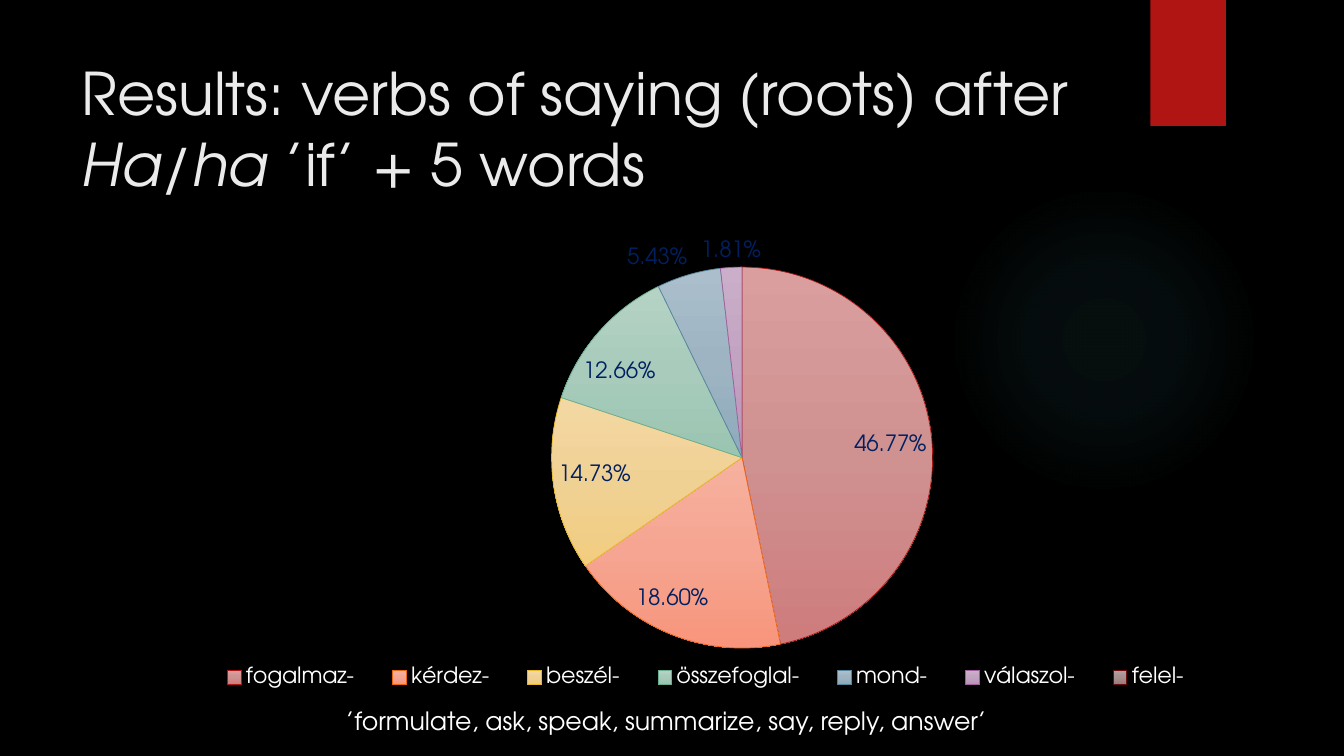
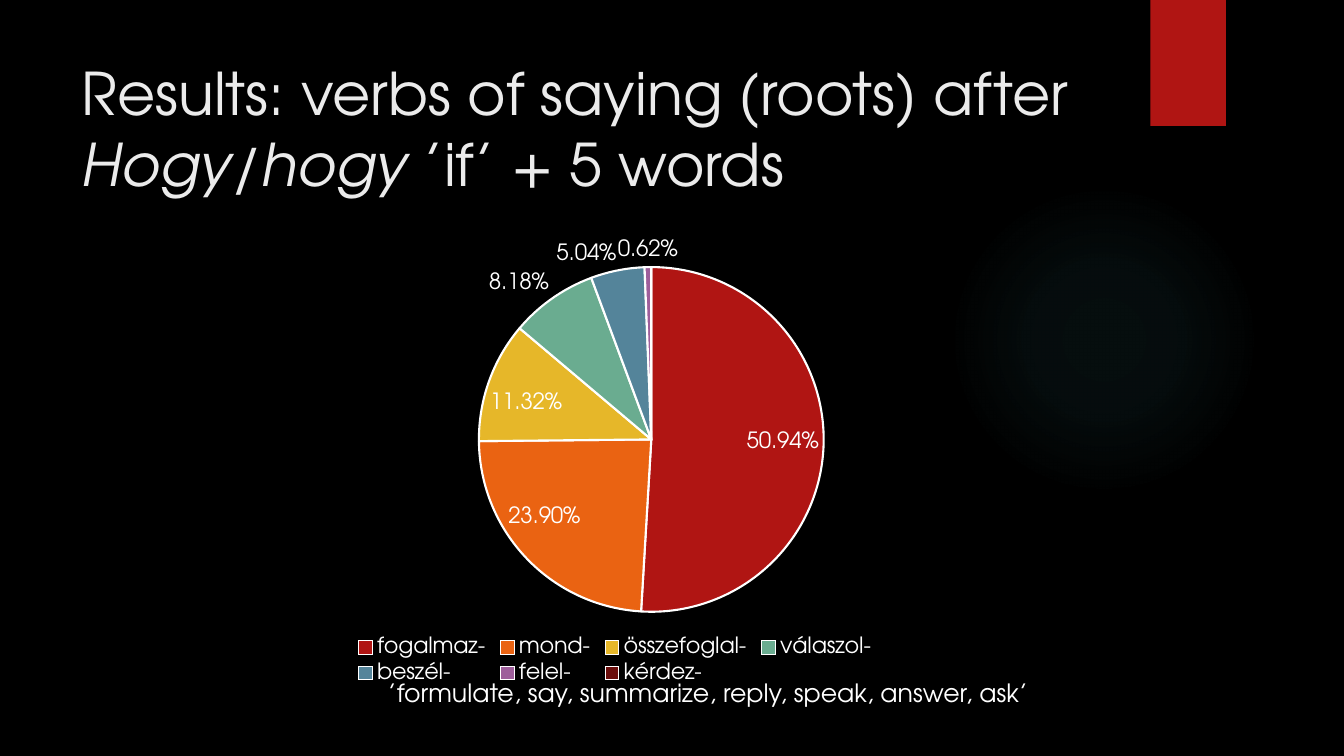
from dataclasses import dataclass

from pptx import Presentation
from pptx.chart.data import CategoryChartData
from pptx.dml.color import RGBColor
from pptx.enum.chart import XL_CHART_TYPE, XL_LABEL_POSITION, XL_LEGEND_POSITION
from pptx.enum.shapes import MSO_SHAPE
from pptx.enum.text import MSO_ANCHOR, MSO_AUTO_SIZE, PP_ALIGN
from pptx.oxml import parse_xml
from pptx.oxml.ns import nsdecls, qn
from pptx.util import Inches, Pt


@dataclass(frozen=True)
class Theme:
    font: str = "TeX Gyre Adventor"
    background: str = "000000"
    title: str = "EBEBEB"
    text: str = "FFFFFF"
    navy: str = "002060"
    glow: str = "50B9C1"
    accents: tuple = ("B01513", "EA6312", "E6B729", "6AAC90", "54849A", "9E5E9B", "6A0D0B")
    tints: tuple = (
        ("DB9E9E", "D09191", "CE7C7C"),
        ("F7B19F", "F5A591", "F8957C"),
        ("F3D8A3", "F0D194", "F2CD80"),
        ("B5D3C5", "A8CBBB", "9AC5B1"),
        ("AABFCB", "9EB4C2", "8DAABB"),
        ("CBAFCA", "C2A3C1", "BB93B9"),
        ("B39E9E", "A89090", "9C7C7C"),
    )
    title_size: int = 42
    caption_size: int = 18
    chart_size: int = 16


THEME = Theme()
TITLE_BOX = (0.71, 0.5, 10.29, 1.53)
GLOW_BOX = (9.41, 1.83, 3.08, 3.08)
BAND_BOX = (11.41, 0, 0.75, 1.25)
DOWNWARD = '<a:lin ang="5400000" scaled="0"/>'
RADIAL = '<a:path path="circle"><a:fillToRect l="50000" t="50000" r="50000" b="50000"/></a:path>'

# Boxes are left, top, width, height in inches on the slide.
SLIDES = [
    {
        "conjunction": "Ha/ha ",
        "shares": {"fogalmaz-": 0.4677, "kérdez-": 0.186, "beszél-": 0.1473,
                   "összefoglal-": 0.1266, "mond-": 0.0543, "válaszol-": 0.0181, "felel-": 0},
        "tinted": True,
        "label_color": THEME.navy,
        "chart_box": (1.21, 2.24, 11.54, 4.89),
        "pie_box": (5.47, 2.65, 3.78, 3.78),
        "legend_box": (1.95, 6.53, 10.1, 0.38),
        "translation": "’formulate, ask, speak, summarize, say, reply, answer’",
        "translation_box": (3.33, 6.95, 8.76, 0.4),
    },
    {
        "conjunction": "Hogy/hogy ",
        "shares": {"fogalmaz-": 0.5094, "mond-": 0.239, "összefoglal-": 0.1132,
                   "válaszol-": 0.0818, "beszél-": 0.0504, "felel-": 0.0062, "kérdez-": 0},
        "tinted": False,
        "label_color": THEME.text,
        "chart_box": (1.21, 2.24, 9.78, 4.59),
        "pie_box": (4.75, 2.65, 3.42, 3.42),
        "legend_box": (3.48, 6.27, 5.24, 0.56),
        "translation": "’formulate, say, summarize, reply, speak, answer, ask’",
        "translation_box": (3.75, 6.67, 9.2, 0.4),
    },
]


def rgb(color):
    return RGBColor.from_string(color)


def inches(box):
    return [Inches(length) for length in box]


def style_font(font, size, color):
    font.name, font.size = THEME.font, Pt(size)
    font.color.rgb = rgb(color)


def set_gradient(fill, owner, stops, direction):
    """Fill with (position %, colour, opacity %) stops; owner is the element holding the fill."""
    fill.gradient()
    stop_xml = "".join(
        f'<a:gs pos="{position * 1000}"><a:srgbClr val="{color}">'
        f'<a:alpha val="{opacity * 1000}"/></a:srgbClr></a:gs>'
        for position, color, opacity in stops)
    gradient = parse_xml(f'<a:gradFill {nsdecls("a")} rotWithShape="1">'
                         f"<a:gsLst>{stop_xml}</a:gsLst>{direction}</a:gradFill>")
    default = owner.find(".//" + qn("a:gradFill"))
    default.getparent().replace(default, gradient)


def set_layout(element, index, box, chart_box, target=""):
    """Pin a chart part to a box on the slide, as fractions of the chart."""
    for old in element.findall(qn("c:layout")):
        element.remove(old)
    left, top, width, height = box
    chart_left, chart_top, chart_width, chart_height = chart_box
    fractions = {"x": (left - chart_left) / chart_width, "y": (top - chart_top) / chart_height,
                 "w": width / chart_width, "h": height / chart_height}
    sizes = "".join(f'<c:{key} val="{value:.4f}"/>' for key, value in fractions.items())
    element.insert(index, parse_xml(
        f'<c:layout {nsdecls("c")}><c:manualLayout>{target}<c:xMode val="edge"/>'
        f'<c:yMode val="edge"/>{sizes}</c:manualLayout></c:layout>'))


def add_decor(slide, layout):
    """Put the glow and the red band on the layout, so that every slide shows them."""
    glow = slide.shapes.add_shape(MSO_SHAPE.OVAL, *inches(GLOW_BOX))
    set_gradient(glow.fill, glow.element,
                 [(0, THEME.glow, 7), (36, THEME.glow, 6), (69, THEME.glow, 0)], RADIAL)
    band = slide.shapes.add_shape(MSO_SHAPE.RECTANGLE, *inches(BAND_BOX))
    band.fill.solid()
    band.fill.fore_color.rgb = rgb(THEME.accents[0])
    for decor in (glow, band):
        decor.line.fill.background()
        decor.shadow.inherit = False
        layout.shapes.element.append(decor.element)


def add_title(slide, conjunction):
    title = slide.shapes.title
    title.left, title.top, title.width, title.height = inches(TITLE_BOX)
    frame = title.text_frame
    frame.word_wrap, frame.auto_size = True, MSO_AUTO_SIZE.NONE
    frame.vertical_anchor = MSO_ANCHOR.MIDDLE
    heading = frame.paragraphs[0]
    heading.alignment = PP_ALIGN.LEFT
    style_font(heading.font, THEME.title_size, THEME.title)
    for words in ("Results: verbs of saying (roots) after ", conjunction, "’if’ + 5 words"):
        run = heading.add_run()
        run.text = words
        run.font.italic = words == conjunction


def color_slices(series, tinted):
    for index, (accent, tints) in enumerate(zip(THEME.accents, THEME.tints)):
        look = series.points[index].format
        if tinted:
            stops = [(position, tint, 100) for position, tint in zip((0, 50, 100), tints)]
            set_gradient(look.fill, look.element, stops, DOWNWARD)
        else:
            look.fill.solid()
            look.fill.fore_color.rgb = rgb(accent)
        look.line.color.rgb = rgb(accent if tinted else THEME.text)
        look.line.width = Pt(0.5 if tinted else 1.5)


def add_pie(slide, content):
    shares, chart_box = content["shares"], content["chart_box"]
    data = CategoryChartData(number_format="0.00%")
    data.categories = list(shares)
    data.add_series("Series 1", list(shares.values()))
    chart = slide.shapes.add_chart(XL_CHART_TYPE.PIE, *inches(chart_box), data).chart
    chart.has_title = False
    style_font(chart.font, THEME.chart_size, THEME.text)

    chart.has_legend = True
    legend = chart.legend
    legend.position = XL_LEGEND_POSITION.BOTTOM
    legend.include_in_layout = False
    style_font(legend.font, THEME.chart_size, THEME.text)

    plot = chart.plots[0]
    plot.vary_by_categories = True
    series = plot.series[0]
    color_slices(series, content["tinted"])
    labels = series.data_labels
    labels.show_value, labels.show_percentage = True, False
    labels.number_format, labels.number_format_is_linked = "0.00%", False
    labels.position = XL_LABEL_POSITION.BEST_FIT
    style_font(labels.font, THEME.chart_size, content["label_color"])
    for index, share in enumerate(shares.values()):
        if share == 0:
            labels._element.insert(0, parse_xml(
                f'<c:dLbl {nsdecls("c")}><c:idx val="{index}"/><c:delete val="1"/></c:dLbl>'))

    plot_area = chart.element.find(".//" + qn("c:plotArea"))
    set_layout(plot_area, 0, content["pie_box"], chart_box, '<c:layoutTarget val="inner"/>')
    set_layout(chart.element.find(".//" + qn("c:legend")), 1, content["legend_box"], chart_box)


def add_translation(slide, words, box):
    frame = slide.shapes.add_textbox(*inches(box)).text_frame
    frame.word_wrap = True
    frame.text = words
    style_font(frame.paragraphs[0].font, THEME.caption_size, THEME.text)


def main():
    deck = Presentation()
    deck.slide_width, deck.slide_height = Inches(13.33), Inches(7.5)
    backdrop = deck.slide_master.background.fill
    backdrop.solid()
    backdrop.fore_color.rgb = rgb(THEME.background)
    title_only = deck.slide_layouts[5]
    for number, content in enumerate(SLIDES):
        slide = deck.slides.add_slide(title_only)
        if number == 0:
            add_decor(slide, title_only)
        add_title(slide, content["conjunction"])
        add_pie(slide, content)
        add_translation(slide, content["translation"], content["translation_box"])
    deck.save("out.pptx")


if __name__ == "__main__":
    main()
